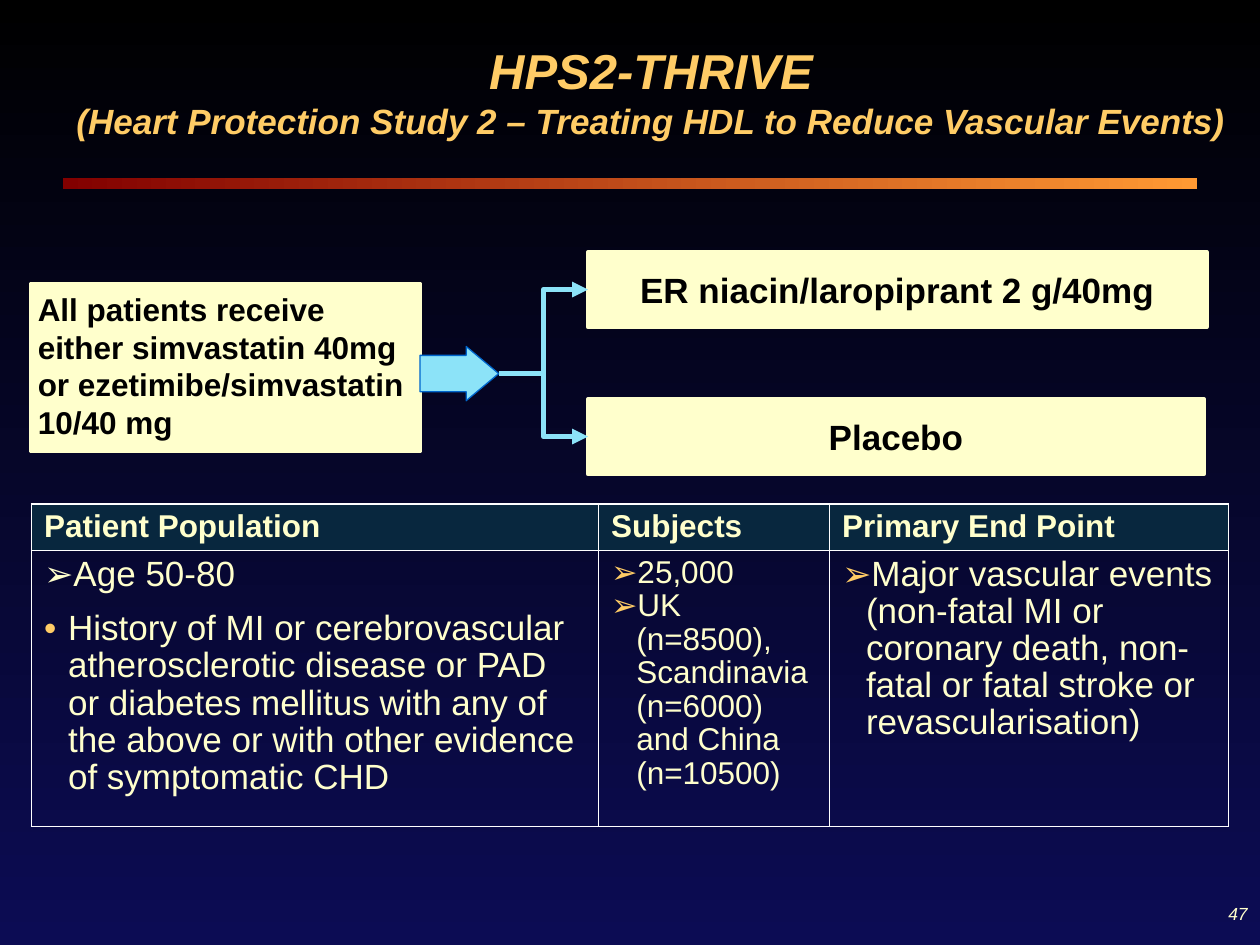
from lxml import etree
from pptx import Presentation
from pptx.dml.color import RGBColor
from pptx.enum.shapes import MSO_CONNECTOR, MSO_SHAPE
from pptx.enum.text import MSO_ANCHOR, MSO_AUTO_SIZE, PP_ALIGN
from pptx.oxml.ns import qn
from pptx.util import Pt

ELBOW = MSO_CONNECTOR.ELBOW
RECTANGLE, RIGHT_ARROW = MSO_SHAPE.RECTANGLE, MSO_SHAPE.RIGHT_ARROW
TOP, MIDDLE, BOTTOM = MSO_ANCHOR.TOP, MSO_ANCHOR.MIDDLE, MSO_ANCHOR.BOTTOM
LEFT, CENTER, RIGHT = PP_ALIGN.LEFT, PP_ALIGN.CENTER, PP_ALIGN.RIGHT

BLACK = RGBColor(0x00, 0x00, 0x00)
WHITE = RGBColor(0xFF, 0xFF, 0xFF)
NAVY = RGBColor(0x0C, 0x0C, 0x54)
DARK_RED = RGBColor(0x82, 0x00, 0x00)
ORANGE = RGBColor(0xFF, 0x99, 0x33)
GOLD = RGBColor(0xFF, 0xCC, 0x66)
CREAM = RGBColor(0xFF, 0xFF, 0xCC)
SKY = RGBColor(0x8C, 0xE3, 0xF8)
BLUE = RGBColor(0x00, 0x66, 0xCC)
TEAL = RGBColor(0x08, 0x27, 0x3E)


def style(paragraph, size, color, bold=False, italic=False, align=LEFT):
    paragraph.alignment = align
    font = paragraph.font
    font.name, font.size, font.bold, font.italic = "Arial", Pt(size), bold, italic
    font.color.rgb = color


def fill_gradient(fill, start, end, angle):
    fill.gradient()
    fill.gradient_angle = angle
    for stop, color in zip(fill.gradient_stops, (start, end)):
        stop.color.rgb = color


prs = Presentation()
prs.slide_width, prs.slide_height = Pt(720), Pt(540)
slide = prs.slides.add_slide(prs.slide_layouts[5])
shapes = slide.shapes
fill_gradient(slide.background.fill, BLACK, NAVY, 270)

# Title and the rule below it
title = shapes.title
title.left, title.top, title.width, title.height = Pt(24), Pt(19.5), Pt(696), Pt(65)
title_frame = title.text_frame
title_frame.text = "HPS2-THRIVE\n(Heart Protection Study 2 – Treating HDL to Reduce Vascular Events)"
title_frame.vertical_anchor = BOTTOM
title_frame.auto_size = MSO_AUTO_SIZE.NONE
for paragraph, size in zip(title_frame.paragraphs, (28, 20)):
    style(paragraph, size, GOLD, bold=True, italic=True, align=CENTER)

rule = shapes.add_shape(RECTANGLE, Pt(36), Pt(102), Pt(648), Pt(6))
rule.shadow.inherit = False
rule.line.fill.background()
fill_gradient(rule.fill, DARK_RED, ORANGE, 0)

# Background therapy and the two treatment arms
boxes = []
for text, left, top, width, height, size, align, anchor in (
    ("All patients receive either simvastatin 40mg or ezetimibe/simvastatin 10/40 mg",
     18, 162, 222, 96, 18, LEFT, TOP),
    ("ER niacin/laropiprant 2 g/40mg", 336, 144, 353.5, 43, 20, CENTER, MIDDLE),
    ("Placebo", 336, 228, 352, 43, 20, CENTER, MIDDLE),
):
    box = shapes.add_shape(RECTANGLE, Pt(left), Pt(top), Pt(width), Pt(height))
    box.shadow.inherit = False
    box.fill.solid()
    box.fill.fore_color.rgb = CREAM
    box.line.color.rgb = CREAM
    box.line.width = Pt(2.25)
    frame = box.text_frame
    frame.margin_left = frame.margin_right = Pt(3.6)
    frame.margin_top = frame.margin_bottom = Pt(3.6)
    frame.word_wrap = True
    frame.vertical_anchor = anchor
    frame.text = text
    style(frame.paragraphs[0], size, BLACK, bold=True, align=align)
    boxes.append(box)

# Block arrow that splits into both arms
split = shapes.add_shape(RIGHT_ARROW, Pt(240), Pt(198), Pt(45), Pt(31))
split.shadow.inherit = False
split.adjustments[0], split.adjustments[1] = 0.67, 0.6
split.fill.solid()
split.fill.fore_color.rgb = SKY
split.line.color.rgb = BLUE
split.line.width = Pt(0.75)

for arm in boxes[1:]:
    branch = shapes.add_connector(ELBOW, Pt(285), Pt(213.5), arm.left, arm.top + arm.height // 2)
    branch.begin_connect(split, 3)
    branch.end_connect(arm, 1)
    branch.line.color.rgb = SKY
    branch.line.width = Pt(3)
    etree.SubElement(branch.line._get_or_add_ln(), qn("a:tailEnd"), type="triangle")
    etree.SubElement(branch._element.spPr, qn("a:effectLst"))

# Study table: heading, column width, text size, indent, bulleted items
columns = (
    ("Patient Population", 324, 20, 13.7, (
        ("➢", CREAM, "Age 50-80"),
        ("•", GOLD, "History of MI or cerebrovascular atherosclerotic disease or PAD or "
                    "diabetes mellitus with any of the above or with other evidence of "
                    "symptomatic CHD"))),
    ("Subjects", 132, 18, 14.4, (
        ("➢", GOLD, "25,000"),
        ("➢", GOLD, "UK (n=8500), Scandinavia (n=6000) and China (n=10500)"))),
    ("Primary End Point", 228, 20, 13.7, (
        ("➢", GOLD, "Major vascular events (non-fatal MI or coronary death, non-fatal or "
                    "fatal stroke or revascularisation)"),)),
)
table = shapes.add_table(2, 3, Pt(18), Pt(288), Pt(684), Pt(184.3)).table
table.first_row = table.horz_banding = False
table.rows[0].height, table.rows[1].height = Pt(26.5), Pt(157.8)

for index, (heading, width, size, indent, items) in enumerate(columns):
    table.columns[index].width = Pt(width)
    head, body = table.cell(0, index), table.cell(1, index)

    head.text = heading
    head.vertical_anchor = MIDDLE
    head.fill.solid()
    head.fill.fore_color.rgb = TEAL
    head_line = head.text_frame.paragraphs[0]
    head_line.line_spacing = 0.95
    style(head_line, 18, CREAM, bold=True)

    body.text = "\n".join(item[2] for item in items)
    body.fill.background()
    for paragraph, (bullet, bullet_color, _) in zip(body.text_frame.paragraphs, items):
        props = paragraph._p.get_or_add_pPr()
        props.set("marL", str(Pt(indent)))
        props.set("indent", str(-Pt(indent)))
        color = etree.SubElement(props, qn("a:buClr"))
        etree.SubElement(color, qn("a:srgbClr"), val=str(bullet_color))
        etree.SubElement(props, qn("a:buFont"), typeface="Arial")
        etree.SubElement(props, qn("a:buChar"), char=bullet)
        paragraph.line_spacing = 0.95
        if index == 0:
            paragraph.space_before = paragraph.space_after = Pt(5)
        style(paragraph, size, CREAM)

    # Thin white borders
    for cell in (head, body):
        for order, side in enumerate(("lnL", "lnR", "lnT", "lnB")):
            border = etree.Element(qn(f"a:{side}"), w=str(Pt(1)))
            solid = etree.SubElement(border, qn("a:solidFill"))
            etree.SubElement(solid, qn("a:srgbClr"), val=str(WHITE))
            cell._tc.get_or_add_tcPr().insert(order, border)

# Page number
page_number = shapes.add_textbox(Pt(569.5), Pt(504), Pt(150.5), Pt(36)).text_frame
page_number.word_wrap = True
page_number.vertical_anchor = MIDDLE
page_number.text = "47"
style(page_number.paragraphs[0], 10, CREAM, italic=True, align=RIGHT)

prs.save("out.pptx")
